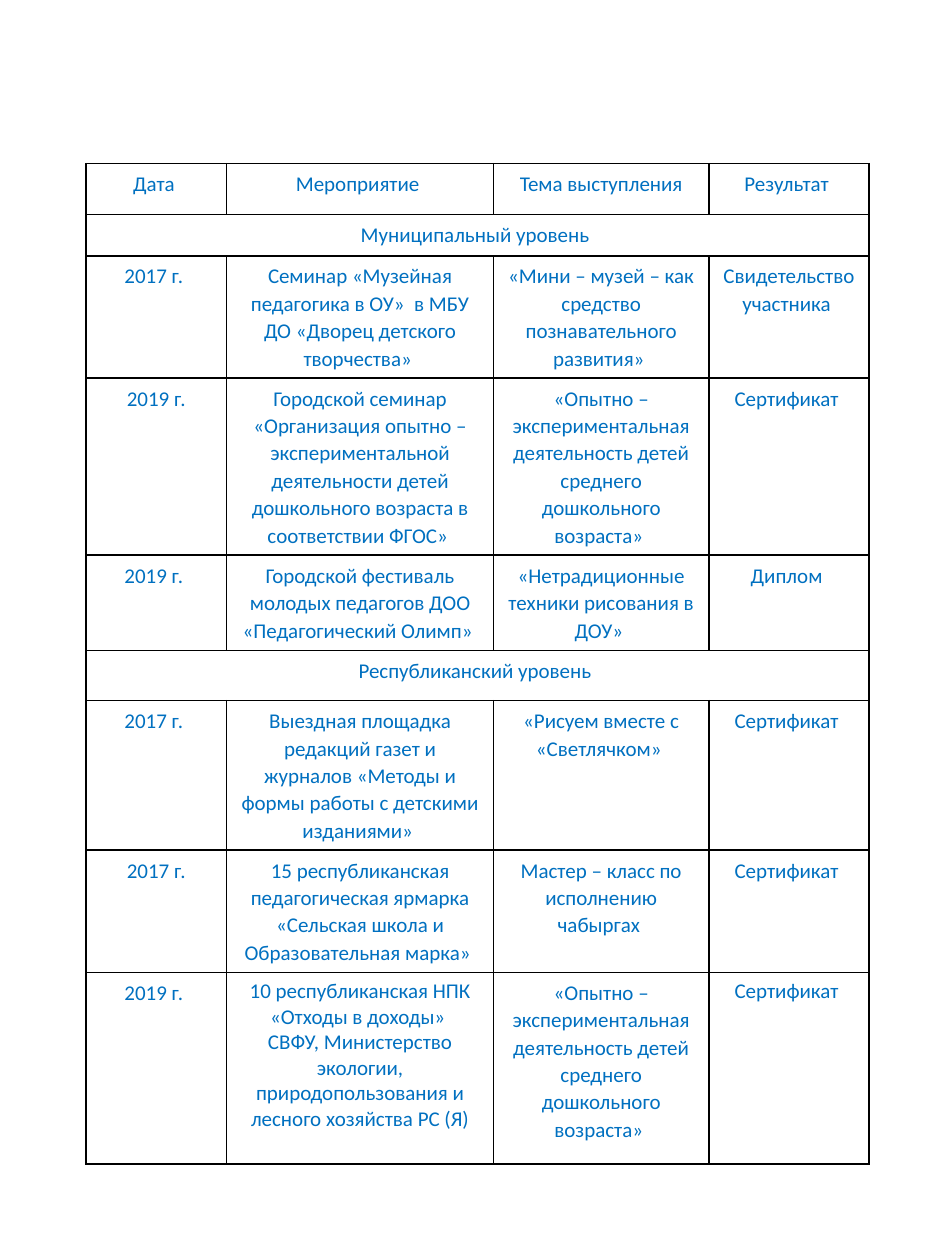
"""Build a one-page table of talks given at municipal and republican events."""
import pptx
import pptx.dml.color
import pptx.enum.text
import pptx.oxml
import pptx.oxml.ns
import pptx.util
from pptx.util import Cm, Pt

BLUE, BLACK = "0070C0", "000000"
LEFT, TOP = 1.73, 3.3
COLS = [2.84, 5.38, 4.34, 3.23]
CERTIFICATE = "Сертификат "
EXPERIMENTS = "«Опытно – экспериментальная деятельность детей среднего дошкольного возраста» "

ROWS = [
    (1.02, ["Дата ", "Мероприятие ", "Тема выступления", "Результат "]),
    (0.84, ["Муниципальный уровень "]),
    (2.46, ["2017 г. ",
            "Семинар «Музейная педагогика в ОУ»  в МБУ ДО «Дворец детского творчества» ",
            "«Мини – музей – как средство познавательного развития» ",
            "Свидетельство участника "]),
    (3.57, ["2019 г.",
            "Городской семинар «Организация опытно – экспериментальной деятельности "
            "детей дошкольного возраста в соответствии ФГОС» ",
            EXPERIMENTS, CERTIFICATE]),
    (1.92, ["2019 г. ",
            "Городской фестиваль молодых педагогов ДОО «Педагогический Олимп» ",
            "«Нетрадиционные техники рисования в ДОУ» ", "Диплом "]),
    (1.01, ["Республиканский уровень "]),
    (3.01, ["2017 г. ",
            "Выездная площадка редакций газет и журналов «Методы и формы работы "
            "с детскими изданиями» ",
            "«Рисуем вместе с «Светлячком» ", CERTIFICATE]),
    (2.46, ["2017 г.",
            "15 республиканская педагогическая ярмарка «Сельская школа и "
            "Образовательная марка» ",
            "Мастер – класс по исполнению чабыргах ", CERTIFICATE]),
    (3.86, ["2019 г. ",
            "10 республиканская НПК «Отходы в доходы» \n"
            "СВФУ, Министерство экологии, природопользования и лесного хозяйства РС (Я)",
            EXPERIMENTS, CERTIFICATE]),
]
SINGLE_SPACED = {(8, 1), (8, 3)}

CENTER = pptx.enum.text.PP_ALIGN.CENTER
SPACED = {"alignment": CENTER, "line_spacing": 1.07, "space_after": Pt(8)}
SINGLE = {"alignment": CENTER}
FONT = {"name": "Calibri", "size": Pt(12), "bold": False}


def rgb(value):
    return pptx.dml.color.RGBColor.from_string(value)


def apply(target, values):
    for name, value in values.items():
        setattr(target, name, value)


def add_borders(cell):
    tc_pr = cell._tc.get_or_add_tcPr()
    for i, side in enumerate("LRTB"):
        tc_pr.insert(i, pptx.oxml.parse_xml(
            f'<a:ln{side} {pptx.oxml.ns.nsdecls("a")} w="{Pt(1)}"><a:solidFill>'
            f'<a:srgbClr val="{BLACK}"/></a:solidFill></a:ln{side}>'))


def write(cell, text, paragraph_format):
    cell.text = text
    for p in cell.text_frame.paragraphs:
        apply(p, paragraph_format)
        for r in p.runs:
            apply(r.font, FONT)
            r.font.color.rgb = rgb(BLUE)


def main():
    prs = pptx.Presentation()
    apply(prs, {"slide_width": Cm(19.05), "slide_height": Cm(25.4)})
    s = prs.slides.add_slide(prs.slide_layouts[6])
    heights = [height for height, _ in ROWS]
    table = s.shapes.add_table(len(ROWS), len(COLS), Cm(LEFT), Cm(TOP),
                               Cm(sum(COLS)), Cm(sum(heights))).table
    apply(table, {"first_row": False, "horz_banding": False})
    for column, width in zip(table.columns, COLS):
        column.width = Cm(width)
    for i, (height, texts) in enumerate(ROWS):
        table.rows[i].height = Cm(height)
        for j in range(len(COLS)):
            cell = table.cell(i, j)
            cell.fill.background()
            add_borders(cell)
        if len(texts) == 1:
            table.cell(i, 0).merge(table.cell(i, len(COLS) - 1))
        for j, text in enumerate(texts):
            write(table.cell(i, j), text, SINGLE if (i, j) in SINGLE_SPACED else SPACED)
    prs.save("out.pptx")


if __name__ == "__main__":
    main()
